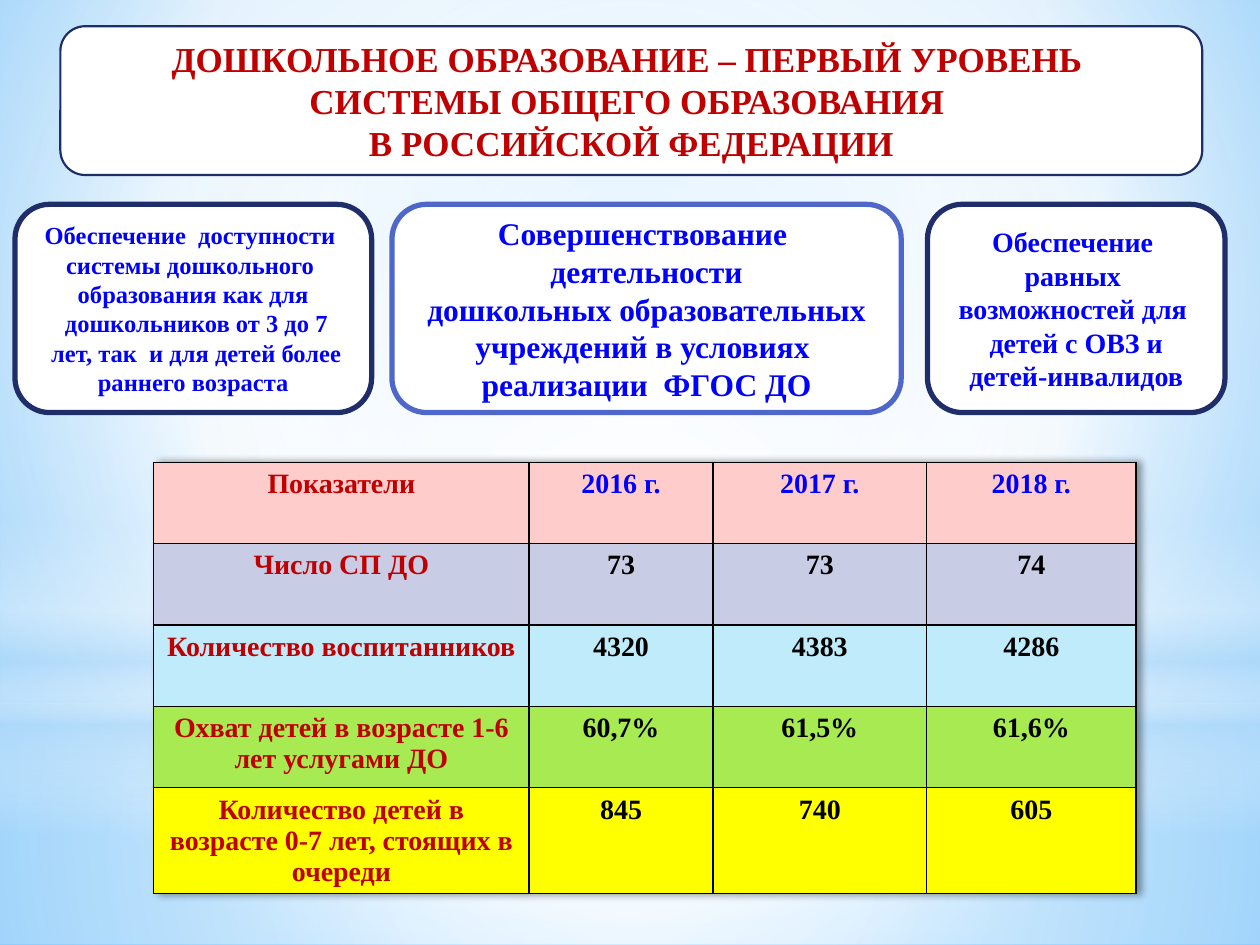
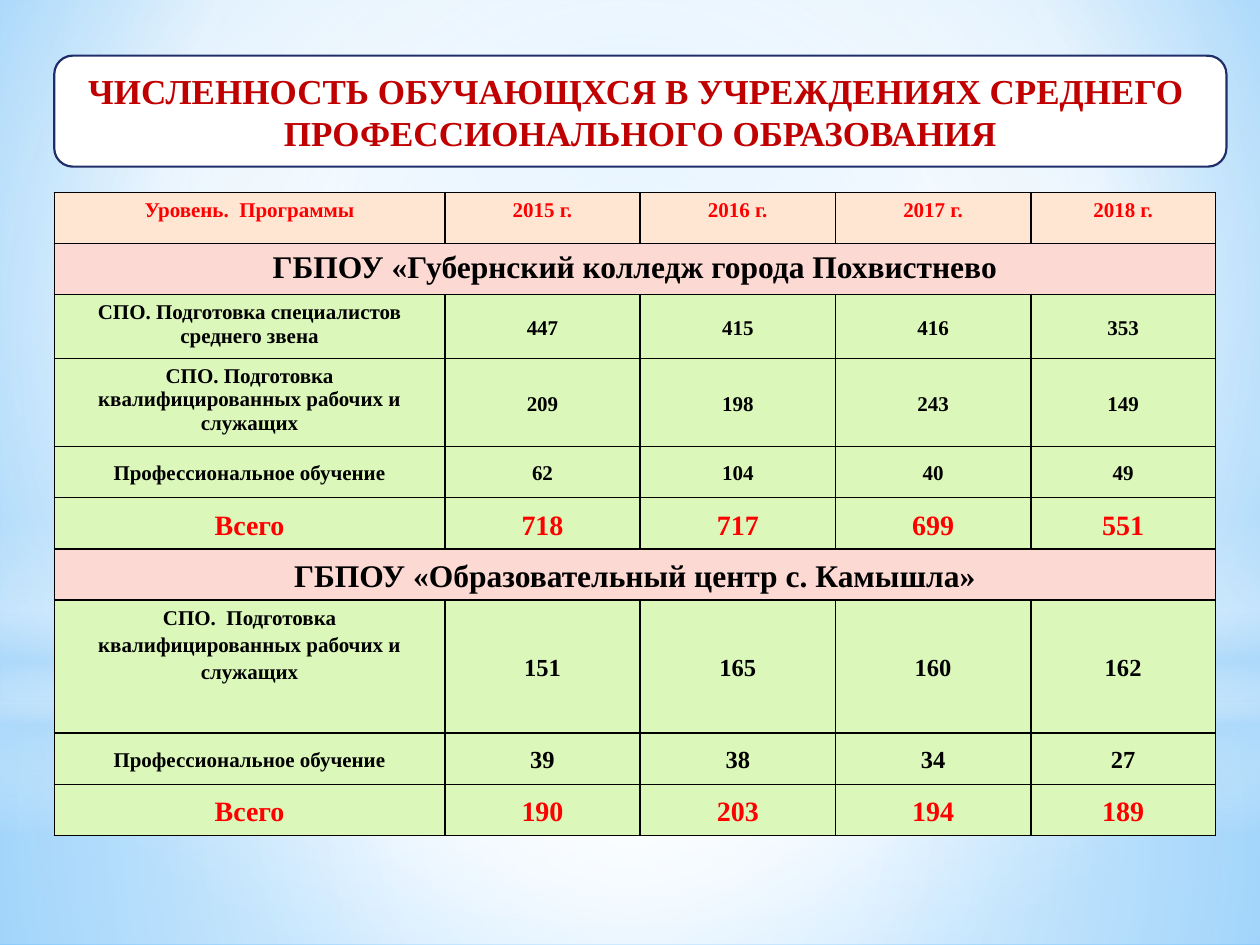
from dataclasses import dataclass

from lxml.etree import SubElement
from pptx import Presentation
from pptx.dml.color import RGBColor
from pptx.enum.shapes import MSO_SHAPE as Preset
from pptx.enum.text import MSO_ANCHOR as Anchor
from pptx.enum.text import MSO_AUTO_SIZE as AutoSize
from pptx.enum.text import PP_ALIGN as Align
from pptx.oxml import parse_xml
from pptx.oxml.ns import nsdecls, qn
from pptx.util import Pt

FONT = "Times New Roman"
BLACK = RGBColor(0x00, 0x00, 0x00)
WHITE = RGBColor(0xFF, 0xFF, 0xFF)
CRIMSON = RGBColor(0xC0, 0x00, 0x00)
RED = RGBColor(0xFF, 0x00, 0x00)
BLUE = RGBColor(0x00, 0x00, 0xFF)
NAVY = RGBColor(0x1F, 0x2E, 0x69)
INDIGO = RGBColor(0x4E, 0x67, 0xC8)
SKY = RGBColor(0x9E, 0xD5, 0xFF)
AZURE = RGBColor(0x5B, 0xB9, 0xFF)
HAZE = RGBColor(0xB4, 0xDC, 0xFA)
PINK = RGBColor(0xFF, 0xCC, 0xCC)
LAVENDER = RGBColor(0xC8, 0xCD, 0xE5)
ICE = RGBColor(0xBF, 0xEB, 0xFA)
LIME = RGBColor(0xA7, 0xEA, 0x52)
YELLOW = RGBColor(0xFF, 0xFF, 0x00)
PEACH = RGBColor(0xFF, 0xE6, 0xD3)
ROSE = RGBColor(0xFC, 0xD9, 0xD3)
MINT = RGBColor(0xDC, 0xF7, 0xBA)

CENTER = (50, 50, 50, 50)
BACKDROP_STOPS = [(0, SKY, 100), (60, WHITE, 100), (100, AZURE, 100)]
BACKDROP_FOCUS = (20, 10, 20, 60)
BACKDROP_LAYERS = [
    (Preset.RECTANGLE, (0, 402, 720, 138), CENTER,
     [(0, WHITE, 91), (37, WHITE, 76), (100, HAZE, 79)]),
    (Preset.RECTANGLE, (0, 0, 720, 402), CENTER,
     [(0, WHITE, 89), (48, WHITE, 62), (100, HAZE, 79)]),
    (Preset.RECTANGLE, (0, 297, 720, 180), None,
     [(0, WHITE, 0), (29, WHITE, 30), (45, HAZE, 40),
      (55, WHITE, 26), (65, HAZE, 60), (100, WHITE, 0)]),
    (Preset.OVAL, (0, 126, 720, 402), CENTER,
     [(0, WHITE, 100), (56, WHITE, 0)]),
]


@dataclass
class CellStyle:
    size: int
    color: RGBColor
    spaced: bool = False
    anchor: Anchor = Anchor.TOP
    top: float = 3.6


@dataclass
class Row:
    height: float
    fill: RGBColor
    texts: list
    label: CellStyle
    value: CellStyle = None


def spaced_style(size, color):
    return CellStyle(size, color, True, Anchor.MIDDLE, 0)


HEAD_16 = CellStyle(16, CRIMSON)
YEAR_16 = CellStyle(16, BLUE)
VALUE_16 = CellStyle(16, BLACK)
HEAD_12 = CellStyle(12, RED)
SECTION_18 = CellStyle(18, BLACK)
SPACED_SECTION = spaced_style(18, BLACK)
LABEL_12 = CellStyle(12, BLACK)
SPACED_12 = spaced_style(12, BLACK)
SPACED_14 = spaced_style(14, BLACK)
TOP_SPACED_12 = CellStyle(12, BLACK, True, Anchor.TOP, 2)
TOTAL_16 = spaced_style(16, RED)

PRESCHOOL_COLUMNS = [214.6, 105, 122.2, 119.6]
PRESCHOOL_ROWS = [
    Row(46.5, PINK, ["Показатели", "2016 г.", "2017 г.", "2018 г."],
        HEAD_16, YEAR_16),
    Row(46.5, LAVENDER, ["Число СП ДО", "73", "73", "74"], HEAD_16, VALUE_16),
    Row(46.5, ICE, ["Количество воспитанников", "4320", "4383", "4286"],
        HEAD_16, VALUE_16),
    Row(46.5, LIME, ["Охват детей в возрасте 1-6 лет услугами ДО",
                     "60,7%", "61,5%", "61,6%"], HEAD_16, VALUE_16),
    Row(60.5, YELLOW, ["Количество детей в возрасте 0-7 лет, стоящих в очереди",
                       "845", "740", "605"], HEAD_16, VALUE_16),
]

COLLEGE_COLUMNS = [223.2, 111.6, 111.6, 111.6, 105.6]
COLLEGE_ROWS = [
    Row(29.2, PEACH, ["Уровень.  Программы", "2015 г.", "2016 г.",
                      "2017 г.", "2018 г."], HEAD_12, HEAD_12),
    Row(29.2, ROSE, ["ГБПОУ «Губернский колледж города Похвистнево"],
        SECTION_18),
    Row(36.4, MINT, ["СПО. Подготовка специалистов среднего звена",
                     "447", "415", "416", "353"], LABEL_12, SPACED_12),
    Row(50.4, MINT, ["СПО. Подготовка квалифицированных рабочих и служащих",
                     "209", "198", "243", "149"], LABEL_12, SPACED_12),
    Row(29.2, MINT, ["Профессиональное обучение", "62", "104", "40", "49"],
        SPACED_12, SPACED_12),
    Row(29.2, MINT, ["Всего", "718", "717", "699", "551"], TOTAL_16, TOTAL_16),
    Row(29.2, ROSE, ["ГБПОУ «Образовательный центр с. Камышла»"],
        SPACED_SECTION),
    Row(76, MINT, ["СПО.  Подготовка квалифицированных рабочих и служащих",
                   "151", "165", "160", "162"], TOP_SPACED_12, SPACED_14),
    Row(29.4, MINT, ["Профессиональное обучение", "39", "38", "34", "27"],
        SPACED_12, SPACED_14),
    Row(29.2, MINT, ["Всего", "190", "203", "194", "189"], TOTAL_16, TOTAL_16),
]

GOAL_CARDS = [
    (8.6, 203.8, NAVY, 14,
     ["Обеспечение  доступности ", "системы дошкольного ",
      "образования как для", " дошкольников от 3 до 7",
      " лет, так  и для детей более раннего возраста"]),
    (224, 291, INDIGO, 18,
     ["Совершенствование ", "деятельности", " дошкольных образовательных ",
      "учреждений в условиях ", "реализации  ФГОС ДО"]),
    (530, 170, NAVY, 16,
     ["Обеспечение ", "равных ", "возможностей для ",
      "детей с ОВЗ и детей-инвалидов"]),
]


def points(box):
    return [Pt(value) for value in box]


def set_gradient(fill, stops, focus=None):
    fill.solid()
    properties = fill._xPr
    solid = properties.find(qn("a:solidFill"))
    gradient = parse_xml(f'<a:gradFill {nsdecls("a")} rotWithShape="1"/>')
    stop_list = SubElement(gradient, qn("a:gsLst"))
    for position, color, opacity in stops:
        stop = SubElement(stop_list, qn("a:gs"), pos=str(position * 1000))
        shade = SubElement(stop, qn("a:srgbClr"), val=str(color))
        if opacity < 100:
            SubElement(shade, qn("a:alpha"), val=str(opacity * 1000))
    if focus:
        circle = SubElement(gradient, qn("a:path"), path="circle")
        edges = {side: str(value * 1000) for side, value in zip("ltrb", focus)}
        SubElement(circle, qn("a:fillToRect"), edges)
    else:
        SubElement(gradient, qn("a:lin"), ang="5400000", scaled="0")
    properties.replace(solid, gradient)


def write_lines(text_frame, lines, size, color, spaced=False):
    text_frame.word_wrap = True
    for index, line in enumerate(lines):
        paragraph = text_frame.add_paragraph() if index else text_frame.paragraphs[0]
        paragraph.alignment = Align.CENTER
        if spaced:
            paragraph.line_spacing = 1.15
            paragraph.space_after = Pt(10)
        run = paragraph.add_run()
        run.text = line
        run.font.name = FONT
        run.font.size = Pt(size)
        run.font.bold = True
        run.font.color.rgb = color


def add_backdrop(presentation, slide):
    set_gradient(presentation.slide_master.background.fill,
                 BACKDROP_STOPS, BACKDROP_FOCUS)
    layout_tree = slide.slide_layout.shapes._spTree
    for index, (preset, box, focus, stops) in enumerate(BACKDROP_LAYERS):
        layer = slide.shapes.add_shape(preset, *points(box))
        layer.shadow.inherit = False
        layer.line.fill.background()
        set_gradient(layer.fill, stops, focus)
        layout_tree.insert(2 + index, layer._element)


def add_panel(slide, box, line_color, line_width):
    panel = slide.shapes.add_shape(Preset.ROUNDED_RECTANGLE, *points(box))
    panel.shadow.inherit = False
    panel.fill.solid()
    panel.fill.fore_color.rgb = WHITE
    panel.line.color.rgb = line_color
    panel.line.width = Pt(line_width)
    return panel


def add_title(slide, box, lines):
    panel = add_panel(slide, box, NAVY, 1.25)
    slide.shapes._spTree.insert(2, panel._element)
    title = slide.shapes.title
    title.left, title.top, title.width, title.height = points(box)
    title.text_frame.auto_size = AutoSize.NONE
    title.text_frame.vertical_anchor = Anchor.MIDDLE
    write_lines(title.text_frame, lines, 20, CRIMSON)


def add_goal_cards(slide, top, height):
    for left, width, line_color, size, lines in GOAL_CARDS:
        card = add_panel(slide, (left, top, width, height), line_color, 3)
        card.text_frame.vertical_anchor = Anchor.MIDDLE
        write_lines(card.text_frame, lines, size, BLUE)


def add_borders(cell):
    properties = cell._tc.get_or_add_tcPr()
    for index, side in enumerate("LRTB"):
        properties.insert(index, parse_xml(
            f'<a:ln{side} {nsdecls("a")} w="12700"><a:solidFill>'
            f'<a:srgbClr val="{BLACK}"/></a:solidFill></a:ln{side}>'))


def fill_cell(cell, text, style):
    cell.vertical_anchor = style.anchor
    if style.spaced:
        cell.margin_left = cell.margin_right = Pt(5)
        cell.margin_top, cell.margin_bottom = Pt(style.top), Pt(0)
    write_lines(cell.text_frame, [text], style.size, style.color, style.spaced)


def add_data_table(slide, left, top, widths, rows):
    box = (left, top, sum(widths), sum(row.height for row in rows))
    table = slide.shapes.add_table(len(rows), len(widths), *points(box)).table
    for column, width in zip(table.columns, widths):
        column.width = Pt(width)
    for row_index, row in enumerate(rows):
        table.rows[row_index].height = Pt(row.height)
        cells = [table.cell(row_index, index) for index in range(len(widths))]
        for cell in cells:
            cell.fill.solid()
            cell.fill.fore_color.rgb = row.fill
            add_borders(cell)
        if len(row.texts) == 1:
            cells[0].merge(cells[-1])
        for index, text in enumerate(row.texts):
            fill_cell(cells[index], text, row.value if index else row.label)
    return table


def add_table_shadow(table):
    table._tbl.tblPr.insert(0, parse_xml(
        f'<a:effectLst {nsdecls("a")}><a:outerShdw blurRad="50800" '
        f'dist="38100" dir="0" algn="l" rotWithShape="0">'
        f'<a:srgbClr val="{BLACK}"><a:alpha val="40000"/></a:srgbClr>'
        f'</a:outerShdw></a:effectLst>'))


def build_preschool_slide(slide):
    add_title(slide, (34.5, 15, 652.5, 85),
              ["ДОШКОЛЬНОЕ ОБРАЗОВАНИЕ – ПЕРВЫЙ УРОВЕНЬ ",
               "СИСТЕМЫ ОБЩЕГО ОБРАЗОВАНИЯ ",
               "В РОССИЙСКОЙ ФЕДЕРАЦИИ"])
    add_goal_cards(slide, 116.8, 119)
    table = add_data_table(slide, 87.8, 264.2, PRESCHOOL_COLUMNS, PRESCHOOL_ROWS)
    add_table_shadow(table)


def build_college_slide(slide):
    add_title(slide, (31, 31.8, 669.8, 63.4),
              ["ЧИСЛЕННОСТЬ ОБУЧАЮЩХСЯ В УЧРЕЖДЕНИЯХ СРЕДНЕГО ",
               "ПРОФЕССИОНАЛЬНОГО ОБРАЗОВАНИЯ"])
    add_data_table(slide, 31, 110, COLLEGE_COLUMNS, COLLEGE_ROWS)


def main():
    presentation = Presentation()
    presentation.slide_width, presentation.slide_height = Pt(720), Pt(540)
    title_only = presentation.slide_layouts[5]
    preschool, college = [presentation.slides.add_slide(title_only) for _ in range(2)]
    add_backdrop(presentation, preschool)
    build_preschool_slide(preschool)
    build_college_slide(college)
    presentation.save("out.pptx")


if __name__ == "__main__":
    main()
